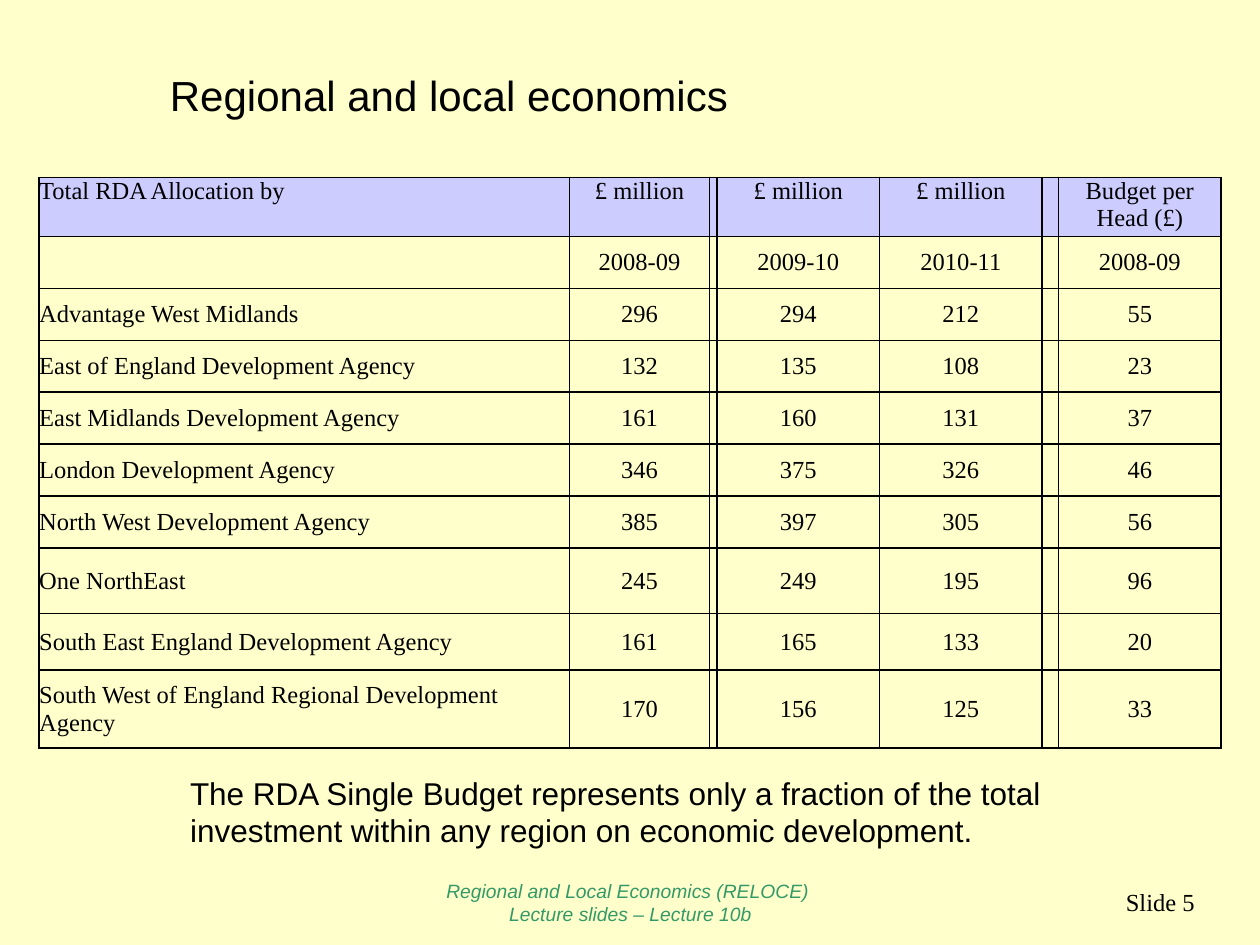
from lxml import etree
from pptx import Presentation
from pptx.dml.color import RGBColor
from pptx.enum.text import MSO_ANCHOR, PP_ALIGN
from pptx.oxml.ns import qn
from pptx.util import Pt

LEFT, CENTER, RIGHT = PP_ALIGN.LEFT, PP_ALIGN.CENTER, PP_ALIGN.RIGHT
TOP, MIDDLE = MSO_ANCHOR.TOP, MSO_ANCHOR.MIDDLE

BACKGROUND, HEADER, BLACK, GREEN = "FFFFCC", "CCCCFF", "000000", "339966"
TITLE = {"name": "Arial", "size": Pt(24)}
BODY = {"name": "Arial", "size": Pt(18)}
SERIF = {"name": "Times New Roman", "size": Pt(14)}
FOOTER = {"name": "Arial", "size": Pt(11), "italic": True}

COL_WIDTHS = [303.1, 80, 4.3, 92.9, 92.9, 9.4, 92.9]
ROW_HEIGHTS = [33.8] + [29.7] * 6 + [37.4, 32.4, 44.6]
SPACER_COLS = (2, 5)
ROWS = [
    ("Total RDA Allocation by", "£ million", "£ million", "£ million", "Budget per Head (£)"),
    ("", "2008-09", "2009-10", "2010-11", "2008-09"),
    ("Advantage West Midlands", 296, 294, 212, 55),
    ("East of England Development Agency", 132, 135, 108, 23),
    ("East Midlands Development Agency", 161, 160, 131, 37),
    ("London Development Agency", 346, 375, 326, 46),
    ("North West Development Agency", 385, 397, 305, 56),
    ("One NorthEast", 245, 249, 195, 96),
    ("South East England Development Agency", 161, 165, 133, 20),
    ("South West of England Regional Development Agency", 170, 156, 125, 33),
]


def rgb(color):
    return RGBColor.from_string(color)


def write(p, text, fmt, color=BLACK, align=LEFT):
    p.alignment = align
    r = p.add_run()
    r.text = text
    for name, value in fmt.items():
        setattr(r.font, name, value)
    r.font.color.rgb = rgb(color)


def add_text(s, box, lines, fmt, color=BLACK, align=LEFT, anchor=TOP, before=0):
    tf = s.shapes.add_textbox(*map(Pt, box)).text_frame
    tf.word_wrap = True
    tf.vertical_anchor = anchor
    for i, line in enumerate(lines):
        p = tf.add_paragraph() if i else tf.paragraphs[0]
        p.space_before = Pt(before)
        write(p, line, fmt, color, align)


def set_borders(cell, color, width):
    tc_pr = cell._tc.get_or_add_tcPr()
    for i, side in enumerate(("a:lnL", "a:lnR", "a:lnT", "a:lnB")):
        ln = etree.Element(qn(side), w=str(Pt(width)))
        fill = etree.SubElement(ln, qn("a:solidFill"))
        etree.SubElement(fill, qn("a:srgbClr"), val=color)
        tc_pr.insert(i, ln)


def format_cell(cell, is_header):
    for side in ("left", "right", "top", "bottom"):
        setattr(cell, f"margin_{side}", 0)
    cell.vertical_anchor = TOP if is_header else MIDDLE
    if is_header:
        cell.fill.solid()
        cell.fill.fore_color.rgb = rgb(HEADER)
    else:
        cell.fill.background()
    set_borders(cell, BLACK, 1)


def add_budget_table(s, left, top):
    size = sum(COL_WIDTHS), sum(ROW_HEIGHTS)
    table = s.shapes.add_table(len(ROW_HEIGHTS), len(COL_WIDTHS),
                               *map(Pt, (left, top, *size))).table
    table.first_row = table.horz_banding = False
    for col, width in zip(table.columns, COL_WIDTHS):
        col.width = Pt(width)
    data_cols = [c for c in range(len(COL_WIDTHS)) if c not in SPACER_COLS]
    for r, (height, values) in enumerate(zip(ROW_HEIGHTS, ROWS)):
        table.rows[r].height = Pt(height)
        for cell in table.rows[r].cells:
            format_cell(cell, is_header=r == 0)
        for c, value in zip(data_cols, values):
            if value != "":
                p = table.cell(r, c).text_frame.paragraphs[0]
                write(p, str(value), SERIF, align=CENTER if c else LEFT)


def main():
    prs = Presentation()
    prs.slide_width, prs.slide_height = Pt(720), Pt(540)
    s = prs.slides.add_slide(prs.slide_layouts[6])
    s.background.fill.solid()
    s.background.fill.fore_color.rgb = rgb(BACKGROUND)

    # Title
    add_text(s, (90, 36, 349.2, 36.7), ["Regional and local economics"], TITLE, before=2)

    # Budget table and remark
    add_budget_table(s, 22.4, 101.3)
    add_text(s, (101.5, 438.5, 538.6, 50.4),
             ["The RDA Single Budget represents only a fraction of the total "
              "investment within any region on economic development."], BODY, before=2)

    # Footer and slide number
    add_text(s, (246.2, 497.5, 228.2, 36),
             ["Regional and Local Economics (RELOCE) ", "Lecture slides – Lecture 10b"],
             FOOTER, GREEN, CENTER, MIDDLE)
    add_text(s, (540, 497.5, 149.8, 36), ["Slide 5"], SERIF, align=RIGHT, anchor=MIDDLE)

    prs.save("out.pptx")


if __name__ == "__main__":
    main()
